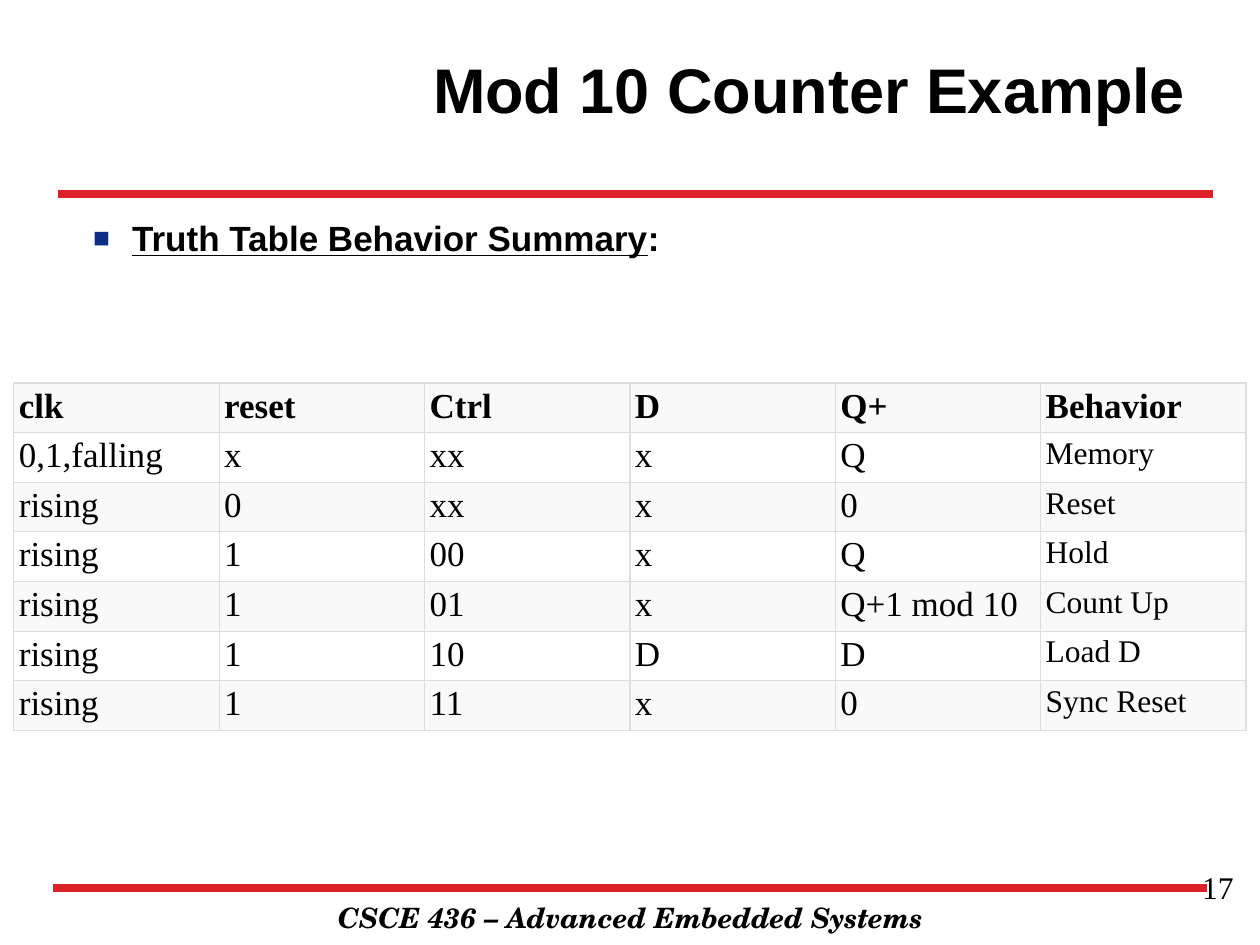
"""Build the Mod 10 counter truth table slide."""
from dataclasses import dataclass

from lxml.etree import SubElement
from pptx import Presentation
from pptx.dml.color import RGBColor as Rgb
from pptx.enum.shapes import MSO_CONNECTOR as Connector
from pptx.enum.text import MSO_ANCHOR as Anchor, MSO_AUTO_SIZE as AutoSize, PP_ALIGN as Align
from pptx.oxml.ns import qn
from pptx.util import Inches, Pt


@dataclass(frozen=True)
class Theme:
    ink: str = "000000"
    rule: str = "DD212B"
    bullet: str = "0C2D83"
    border: str = "DDDDDD"
    bands: tuple = ("F9F9F9", "FFFFFF")
    heading_font: str = "Arial"
    table_font: str = "Times New Roman"
    footer_font: str = "TeX Gyre Schola"
    title_size: int = 36
    text_size: int = 20
    small_size: int = 18
    footer_size: int = 16


THEME = Theme()
TRUTH_TABLE = [
    ["clk", "reset", "Ctrl", "D", "Q+", "Behavior"],
    ["0,1,falling", "x", "xx", "x", "Q", "Memory"],
    ["rising", "0", "xx", "x", "0", "Reset"],
    ["rising", "1", "00", "x", "Q", "Hold"],
    ["rising", "1", "01", "x", "Q+1 mod 10", "Count Up"],
    ["rising", "1", "10", "D", "D", "Load D"],
    ["rising", "1", "11", "x", "0", "Sync Reset"],
]
COLUMN_WIDTH, ROW_HEIGHT = 1.63, 0.37


def add_run(paragraph, text, font_name, size, bold=False, italic=False, underline=False):
    run = paragraph.add_run()
    run.text = text
    font = run.font
    font.name, font.size = font_name, Pt(size)
    font.bold, font.italic, font.underline = bold, italic, underline
    font.color.rgb = Rgb.from_string(THEME.ink)


def add_title(slide, text):
    title = slide.shapes.title
    title.left, title.top = Inches(2.09), Inches(0.08)
    title.width, title.height = Inches(7.42), Inches(1.25)
    frame = title.text_frame
    frame.auto_size = AutoSize.NONE
    frame.vertical_anchor = Anchor.MIDDLE
    paragraph = frame.paragraphs[0]
    paragraph.alignment = Align.RIGHT
    add_run(paragraph, text, THEME.heading_font, THEME.title_size, bold=True)


def add_rule(slide, left, right, y):
    rule = slide.shapes.add_connector(
        Connector.STRAIGHT, Inches(left), Inches(y), Inches(right), Inches(y))
    rule.line.color.rgb = Rgb.from_string(THEME.rule)
    rule.line.width = Pt(4.5)
    SubElement(rule._element.spPr, qn("a:effectLst"))


def add_text(slide, left, top, width, height, align):
    frame = slide.shapes.add_textbox(
        Inches(left), Inches(top), Inches(width), Inches(height)).text_frame
    frame.word_wrap = True
    paragraph = frame.paragraphs[0]
    paragraph.alignment = align
    return paragraph


def add_square_bullet(paragraph):
    properties = paragraph._p.get_or_add_pPr()
    indent = Inches(0.31)
    properties.set("marL", str(indent))
    properties.set("indent", str(-indent))
    color = SubElement(properties, qn("a:buClr"))
    SubElement(color, qn("a:srgbClr"), val=THEME.bullet)
    SubElement(properties, qn("a:buSzPct"), val="80000")
    SubElement(properties, qn("a:buFont"), typeface=THEME.heading_font)
    SubElement(properties, qn("a:buChar"), char="■")


def add_borders(cell):
    properties = cell._tc.get_or_add_tcPr()
    for side in ("lnL", "lnR", "lnT", "lnB"):
        line = SubElement(properties, qn(f"a:{side}"), w=str(Pt(0.75)))
        fill = SubElement(line, qn("a:solidFill"))
        SubElement(fill, qn("a:srgbClr"), val=THEME.border)


def fill_cell(cell, text, band, size, bold):
    cell.margin_left = cell.margin_right = Inches(0.04)
    cell.margin_top = cell.margin_bottom = Inches(0.03)
    add_borders(cell)
    cell.fill.solid()
    cell.fill.fore_color.rgb = Rgb.from_string(band)
    add_run(cell.text_frame.paragraphs[0], text, THEME.table_font, size, bold)


def add_truth_table(slide, rows):
    row_count, column_count = len(rows), len(rows[0])
    table = slide.shapes.add_table(
        row_count, column_count, Inches(0.11), Inches(3.04),
        Inches(COLUMN_WIDTH * column_count), Inches(ROW_HEIGHT * row_count)).table
    table.horz_banding = False
    for column in table.columns:
        column.width = Inches(COLUMN_WIDTH)
    for r, values in enumerate(rows):
        table.rows[r].height = Inches(ROW_HEIGHT)
        for c, value in enumerate(values):
            is_behavior = r > 0 and c == column_count - 1
            size = THEME.small_size if is_behavior else THEME.text_size
            fill_cell(table.cell(r, c), value, THEME.bands[r % 2], size, bold=r == 0)


def main():
    deck = Presentation()
    deck.slide_width, deck.slide_height = Inches(10), Inches(7.5)
    slide = deck.slides.add_slide(deck.slide_layouts[5])

    footer = add_text(slide, 1.42, 7.1, 7.17, 0.37, Align.CENTER)
    add_run(footer, "CSCE 436 – Advanced Embedded Systems", THEME.footer_font,
            THEME.footer_size, bold=True, italic=True)
    add_rule(slide, 0.42, 9.58, 7.05)
    add_rule(slide, 0.46, 9.63, 1.54)
    add_title(slide, "Mod 10 Counter Example")

    summary = add_text(slide, 0.64, 1.67, 8.89, 4.73, Align.LEFT)
    add_square_bullet(summary)
    add_run(summary, "Truth Table Behavior Summary", THEME.heading_font,
            THEME.text_size, bold=True, underline=True)
    add_run(summary, ":", THEME.heading_font, THEME.text_size, bold=True)

    page_number = add_text(slide, 7.56, 6.84, 2.33, 0.52, Align.RIGHT)
    add_run(page_number, "17", THEME.table_font, THEME.small_size)
    add_truth_table(slide, TRUTH_TABLE)
    deck.save("out.pptx")


if __name__ == "__main__":
    main()
